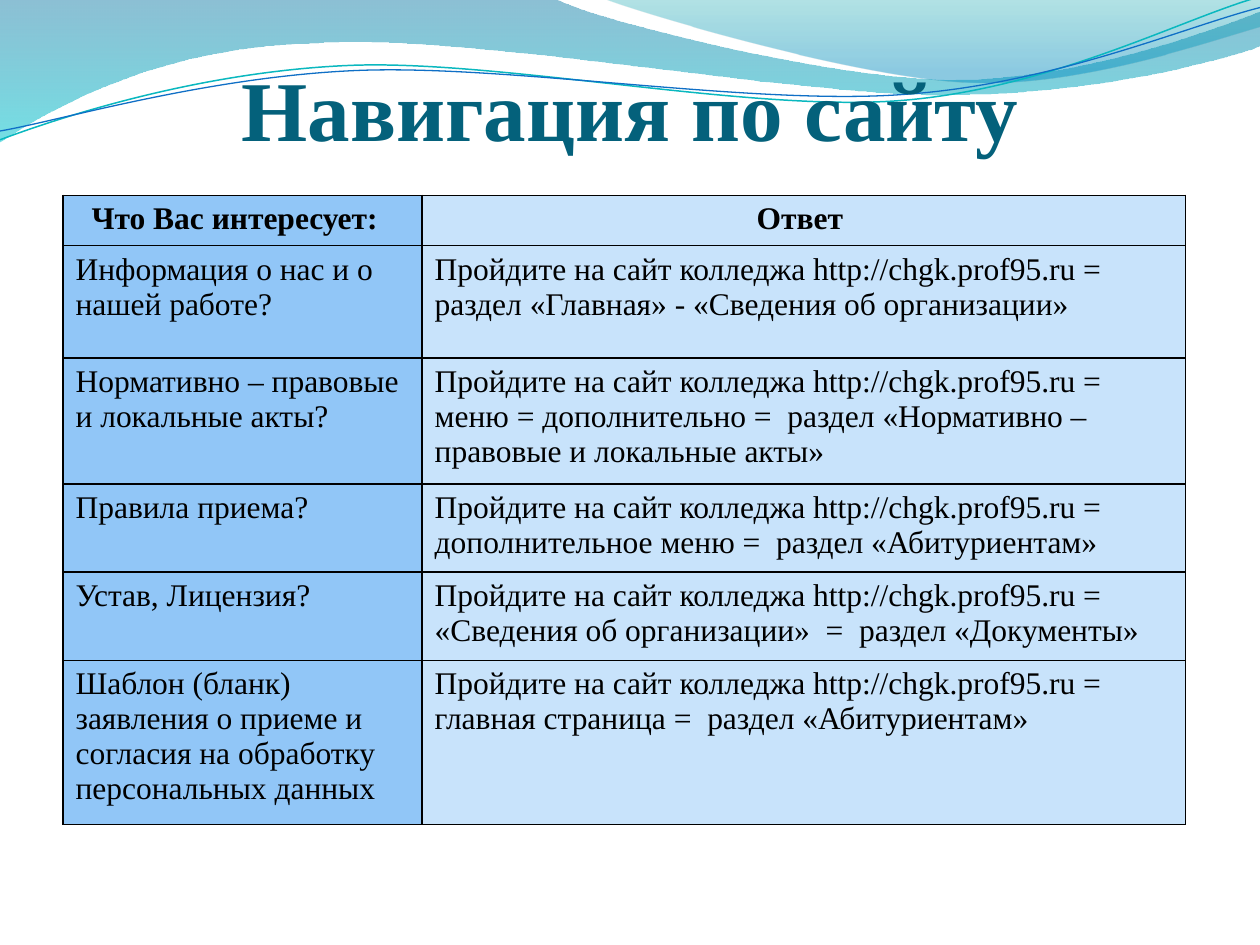
from dataclasses import dataclass
from typing import Optional

import pptx
import pptx.dml.color
import pptx.enum.text
import pptx.oxml
import pptx.oxml.ns
import pptx.util
from pptx.util import Inches, Pt

FONT = "Times New Roman"
BLACK = "000000"
COLUMN_FILLS = ("91C6F7", "C8E3FB")
COLUMN_WIDTHS = (2.85, 6.06)
ROW_HEIGHTS = (0.36, 0.89, 0.89, 0.63, 0.36, 0.36)  # rows grow with their text
TABLE_HEIGHT = 4.99
SITE = "Пройдите на сайт колледжа http://chgk.prof95.ru = "
HEADER = ("Что Вас интересует:  ", "Ответ ")
ANSWERS = (
    ("Информация о нас и о нашей работе?",
     "раздел «Главная» - «Сведения об организации»"),
    ("Нормативно – правовые и локальные акты?",
     "меню = дополнительно =  раздел «Нормативно – правовые и локальные акты»"),
    ("Правила приема?",
     "дополнительное меню =  раздел «Абитуриентам»"),
    ("Устав, Лицензия?",
     "«Сведения об организации»  =  раздел «Документы»"),
    ("Шаблон (бланк) заявления о приеме и согласия на обработку персональных данных",
     "главная страница =  раздел «Абитуриентам»"),
)


@dataclass
class Stop:
    position: float
    color: str
    alpha: int  # percent


@dataclass
class Wave:
    """Each segment is an end point (2 numbers) or a cubic curve (6 numbers)."""
    start: tuple[float, float]
    segments: tuple[tuple[float, ...], ...]
    stops: tuple[Stop, ...] = ()
    line: Optional[str] = None
    width: float = 0


WAVES = (
    Wave((0, 0),
         ((4.4, -0.01), (4.76, 0.17, 6.64, 0.63, 7.58, 0.63),
          (8.53, 0.63, 9.58, 0.26, 10, 0.09), (10.01, 0.36),
          (9.83, 0.44, 8.7, 0.76, 7.46, 0.75),
          (6.22, 0.75, 3.82, 0.28, 2.57, 0.34),
          (1.29, 0.36, 0.46, 0.83, -0.01, 1.13)),
         stops=(Stop(0, "0074A1", 45), Stop(1, "00C6CF", 55))),
    Wave((4.79, -0.01),
         ((5.09, 0.11, 6.82, 0.62, 7.69, 0.65),
          (8.56, 0.69, 9.61, 0.32, 10, 0.21), (10, 0)),
         stops=(Stop(0, "00A1A9", 30), Stop(0.8, "008BBF", 45))),
    Wave((0, 1.11),
         ((0.48, 0.93, 1.58, 0.57, 2.77, 0.52),
          (3.95, 0.47, 5.93, 0.89, 7.13, 0.8),
          (8.33, 0.71, 9.38, 0.15, 9.98, -0.02)),
         line="0AB8BF", width=0.85),
    Wave((0, 1.04),
         ((0.47, 0.96, 1.64, 0.61, 2.83, 0.56),
          (4.03, 0.51, 5.97, 0.84, 7.17, 0.75),
          (8.36, 0.67, 9.41, 0.21, 10, 0.06)),
         line="0F6FC6", width=0.75),
)


def rgb(color: str) -> pptx.dml.color.RGBColor:
    return pptx.dml.color.RGBColor.from_string(color)


def bend_segments(sp, wave: Wave) -> None:
    """Join the three straight pieces of each curve into one cubic segment."""
    pieces = iter(list(sp.element.iter(pptx.oxml.ns.qn("a:lnTo"))))
    for segment in wave.segments:
        first = next(pieces)
        if len(segment) == 2:
            continue
        curve = pptx.oxml.parse_xml(f'<a:cubicBezTo {pptx.oxml.ns.nsdecls("a")}/>')
        first.addprevious(curve)
        for piece in (first, next(pieces), next(pieces)):
            curve.append(piece[0])
            piece.getparent().remove(piece)


def add_wave(s, wave: Wave) -> None:
    points = [(Inches(seg[i]), Inches(seg[i + 1]))
              for seg in wave.segments for i in range(0, len(seg), 2)]
    builder = s.shapes.build_freeform(*map(Inches, wave.start), scale=1.0)
    builder.add_line_segments(points, close=bool(wave.stops))
    sp = builder.convert_to_shape()
    bend_segments(sp, wave)
    sp.shadow.inherit = False
    if wave.line:
        sp.fill.background()
        sp.line.color.rgb = rgb(wave.line)
        sp.line.width = Pt(wave.width)
        return
    sp.line.fill.background()
    sp.fill.gradient()
    sp.fill.gradient_angle = 270
    for gradient_stop, stop in zip(sp.fill.gradient_stops, wave.stops):
        gradient_stop.position = stop.position
        gradient_stop.color.rgb = rgb(stop.color)
    colors = sp.element.iterfind(".//" + pptx.oxml.ns.qn("a:gs") + "/*")
    for color, stop in zip(colors, wave.stops):
        color.append(pptx.oxml.parse_xml(
            f'<a:alpha {pptx.oxml.ns.nsdecls("a")} val="{stop.alpha * 1000}"/>'))


def add_run(p, text: str, size: float, color: str, bold: bool, centred: bool) -> None:
    if centred:
        p.alignment = pptx.enum.text.PP_ALIGN.CENTER
    r = p.add_run()
    r.text = text
    r.font.name = FONT
    r.font.size = Pt(size)
    r.font.bold = bold
    r.font.color.rgb = rgb(color)


def add_title(s, text: str) -> None:
    tf = s.shapes.add_textbox(Inches(0.5), Inches(0.51), Inches(9), Inches(0.75)).text_frame
    tf.word_wrap = True
    tf.margin_left = tf.margin_right = tf.margin_top = tf.margin_bottom = 0
    tf.vertical_anchor = pptx.enum.text.MSO_ANCHOR.BOTTOM
    add_run(tf.paragraphs[0], text, 48.6, "04617B", True, True)


def set_borders(cell) -> None:
    properties = cell._tc.get_or_add_tcPr()
    for i, side in enumerate(("lnL", "lnR", "lnT", "lnB")):
        properties.insert(i, pptx.oxml.parse_xml(
            f'<a:{side} {pptx.oxml.ns.nsdecls("a")} w="{Pt(1)}"><a:solidFill>'
            f'<a:srgbClr val="{BLACK}"/></a:solidFill></a:{side}>'))


def add_answers(s) -> None:
    rows = [HEADER] + [(question, SITE + answer) for question, answer in ANSWERS]
    frame = s.shapes.add_table(
        len(rows), len(HEADER), Inches(0.5), Inches(1.55),
        Inches(sum(COLUMN_WIDTHS)), Inches(TABLE_HEIGHT))
    table = frame.table
    for column, width in zip(table.columns, COLUMN_WIDTHS):
        column.width = Inches(width)
    for row, height in zip(table.rows, ROW_HEIGHTS):
        row.height = Inches(height)
    frame.height = Inches(TABLE_HEIGHT)
    for i, texts in enumerate(rows):
        for j, text in enumerate(texts):
            cell = table.cell(i, j)
            cell.fill.solid()
            cell.fill.fore_color.rgb = rgb(COLUMN_FILLS[j])
            set_borders(cell)
            add_run(cell.text_frame.paragraphs[0], text, 18, BLACK, i == 0, i == 0)


def main() -> None:
    prs = pptx.Presentation()
    prs.slide_width, prs.slide_height = Inches(10), Inches(7.5)
    s = prs.slides.add_slide(prs.slide_layouts[6])
    # Waves along the top edge
    for wave in WAVES:
        add_wave(s, wave)
    # Title and table of answers
    add_title(s, "Навигация по сайту")
    add_answers(s)
    prs.save("out.pptx")


if __name__ == "__main__":
    main()
